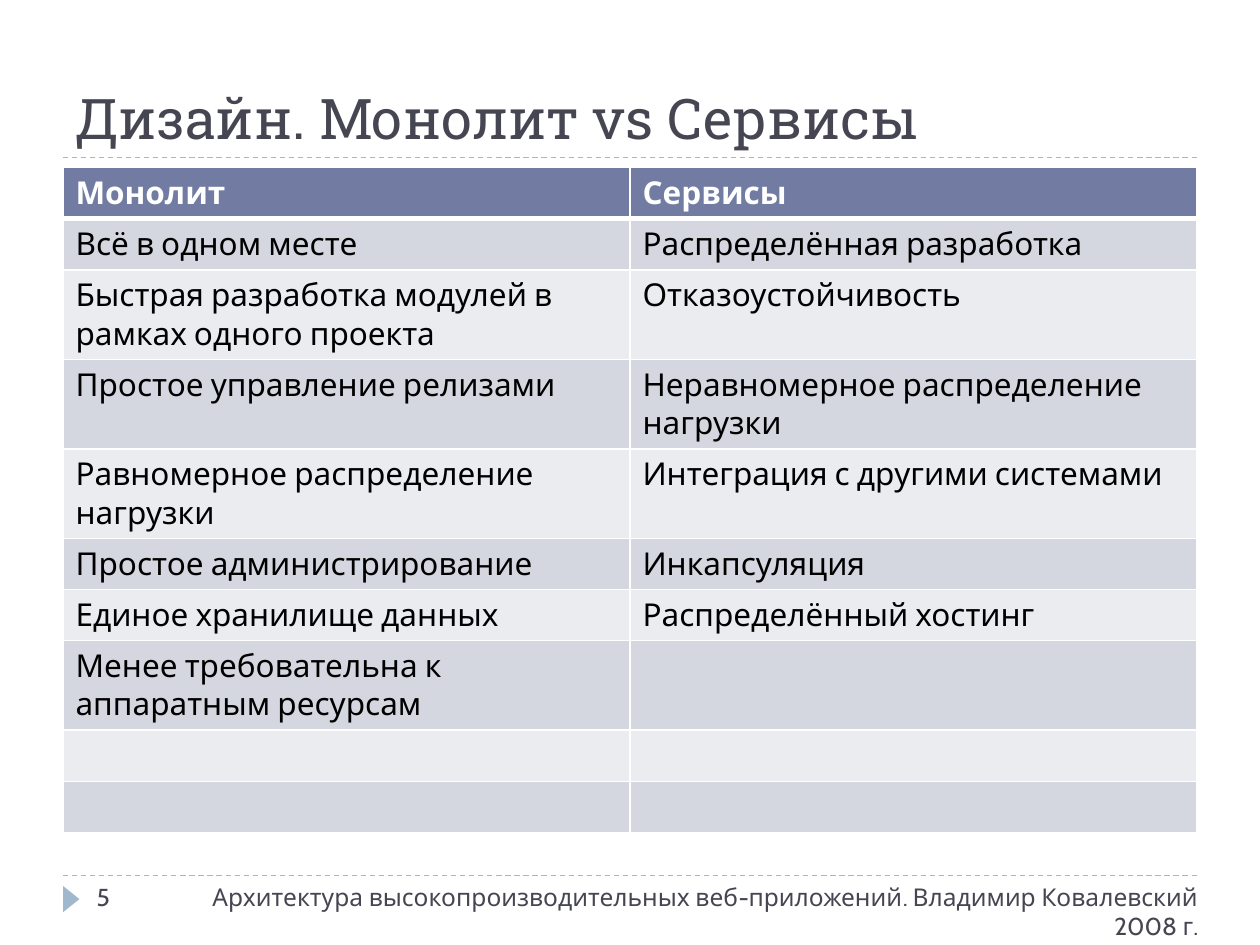
"""Build the slide comparing monolithic and service-based design."""
from dataclasses import dataclass

from lxml.etree import SubElement
from pptx import Presentation
from pptx.dml.color import RGBColor
from pptx.enum.dml import MSO_LINE_DASH_STYLE as Dash
from pptx.enum.shapes import MSO_CONNECTOR as Connector, MSO_SHAPE as Preset
from pptx.enum.text import MSO_ANCHOR as Anchor, PP_ALIGN as Align
from pptx.oxml.ns import qn
from pptx.slide import Slide
from pptx.table import _Cell as Cell
from pptx.text.text import _Paragraph as Paragraph
from pptx.util import Cm, Pt


@dataclass(frozen=True)
class Theme:
    heading_font: str = "Roboto Slab"
    body_font: str = "Cabin"
    ink: str = "464653"
    accent: str = "9FB8CD"
    header_fill: str = "727CA3"
    band_fills: tuple[str, str] = ("D5D7E0", "EBECF0")
    white: str = "FFFFFF"
    black: str = "000000"
    title_size: int = 32
    table_size: int = 18
    footer_size: int = 14
    rule_width: float = 0.75
    border_width: int = 1
    header_border_width: int = 3


@dataclass(frozen=True)
class TextStyle:
    font: str
    size: int
    color: str
    bold: bool = False


@dataclass(frozen=True)
class Label:
    text: str
    left: float
    top: float
    width: float
    height: float
    style: TextStyle
    align: Align = Align.LEFT
    anchor: Anchor = Anchor.TOP


THEME = Theme()
TITLE_STYLE = TextStyle(THEME.heading_font, THEME.title_size, THEME.ink)
FOOTER_STYLE = TextStyle(THEME.body_font, THEME.footer_size, THEME.ink)
HEADER_STYLE = TextStyle(THEME.body_font, THEME.table_size, THEME.white, True)
CELL_STYLE = TextStyle(THEME.body_font, THEME.table_size, THEME.black)

MARGIN = 1.27
CONTENT_WIDTH = 22.86
TITLE_RULE_TOP = 3.18
FOOTER_TOP = 17.65
TABLE_TOP = 3.38
ROW_HEIGHT = 1.03

LABELS = (
    Label("Дизайн. Монолит vs Сервисы", MARGIN, 0.43, CONTENT_WIDTH, 2.74,
          TITLE_STYLE, anchor=Anchor.BOTTOM),
    Label("Архитектура высокопроизводительных веб-приложений. "
          "Владимир Ковалевский 2008 г.",
          2.77, FOOTER_TOP, 21.64, 1.02, FOOTER_STYLE, align=Align.RIGHT),
    Label("5", 1.7, FOOTER_TOP, 5.51, 1.02, FOOTER_STYLE),
)
ROWS = (
    ("Монолит", "Сервисы"),
    ("Всё в одном месте", "Распределённая разработка"),
    ("Быстрая разработка модулей в рамках одного проекта", "Отказоустойчивость"),
    ("Простое управление релизами", "Неравномерное распределение нагрузки"),
    ("Равномерное распределение нагрузки", "Интеграция с другими системами"),
    ("Простое администрирование", "Инкапсуляция"),
    ("Единое хранилище данных", "Распределённый хостинг"),
    ("Менее требовательна к аппаратным ресурсам", ""),
    ("", ""),
    ("", ""),
)


def add_run(paragraph: Paragraph, text: str, style: TextStyle) -> None:
    """Append one styled run to a paragraph."""
    run = paragraph.add_run()
    run.text = text
    run.font.name = style.font
    run.font.size = Pt(style.size)
    run.font.bold = style.bold
    run.font.color.rgb = RGBColor.from_string(style.color)


def add_label(slide: Slide, label: Label) -> None:
    """Place a wrapped text box."""
    shape = slide.shapes.add_textbox(
        Cm(label.left), Cm(label.top), Cm(label.width), Cm(label.height))
    frame = shape.text_frame
    frame.word_wrap = True
    frame.vertical_anchor = label.anchor
    paragraph = frame.paragraphs[0]
    paragraph.alignment = label.align
    add_run(paragraph, label.text, label.style)


def add_rule(slide: Slide, top: float) -> None:
    """Draw a dashed rule across the content width."""
    rule = slide.shapes.add_connector(
        Connector.STRAIGHT, Cm(MARGIN), Cm(top), Cm(MARGIN + CONTENT_WIDTH), Cm(top))
    rule.line.color.rgb = RGBColor.from_string(THEME.accent)
    rule.line.width = Pt(THEME.rule_width)
    rule.line.dash_style = Dash.DASH
    SubElement(rule.element.spPr, qn("a:effectLst"))


def add_page_marker(slide: Slide) -> None:
    """Draw the triangle pointing at the page number."""
    shape = slide.shapes.add_shape(
        Preset.ISOSCELES_TRIANGLE, Cm(1.17), Cm(17.96), Cm(0.53), Cm(0.33))
    shape.rotation = 90
    shape.shadow.inherit = False
    shape.fill.solid()
    shape.fill.fore_color.rgb = RGBColor.from_string(THEME.accent)
    shape.line.fill.background()


def set_borders(cell: Cell, row_index: int) -> None:
    """Give a cell white borders, heavier beneath the header."""
    thick, thin = THEME.header_border_width, THEME.border_width
    widths = {
        "a:lnL": thin,
        "a:lnR": thin,
        "a:lnT": thick if row_index == 1 else thin,
        "a:lnB": thick if row_index == 0 else thin,
    }
    properties = cell._tc.get_or_add_tcPr()
    for tag, width in widths.items():
        border = SubElement(properties, qn(tag), w=str(Pt(width)))
        fill = SubElement(border, qn("a:solidFill"))
        SubElement(fill, qn("a:srgbClr"), val=THEME.white)


def fill_cell(cell: Cell, text: str, row_index: int) -> None:
    """Style a cell by its row and write its text."""
    is_header = row_index == 0
    color = THEME.header_fill if is_header else THEME.band_fills[(row_index - 1) % 2]
    set_borders(cell, row_index)
    cell.fill.solid()
    cell.fill.fore_color.rgb = RGBColor.from_string(color)
    if text:
        style = HEADER_STYLE if is_header else CELL_STYLE
        add_run(cell.text_frame.paragraphs[0], text, style)


def add_comparison_table(slide: Slide) -> None:
    """Add the two-column comparison."""
    table = slide.shapes.add_table(
        len(ROWS), len(ROWS[0]), Cm(MARGIN), Cm(TABLE_TOP),
        Cm(CONTENT_WIDTH), Cm(ROW_HEIGHT * len(ROWS))).table
    for row_index, texts in enumerate(ROWS):
        table.rows[row_index].height = Cm(ROW_HEIGHT)
        for column_index, text in enumerate(texts):
            fill_cell(table.cell(row_index, column_index), text, row_index)


def main() -> None:
    """Assemble and save the presentation."""
    presentation = Presentation()
    presentation.slide_width, presentation.slide_height = Cm(25.4), Cm(19.05)
    slide = presentation.slides.add_slide(presentation.slide_layouts[6])
    for top in (FOOTER_TOP, TITLE_RULE_TOP):
        add_rule(slide, top)
    add_page_marker(slide)
    add_comparison_table(slide)
    for label in LABELS:
        add_label(slide, label)
    presentation.save("out.pptx")


if __name__ == "__main__":
    main()
